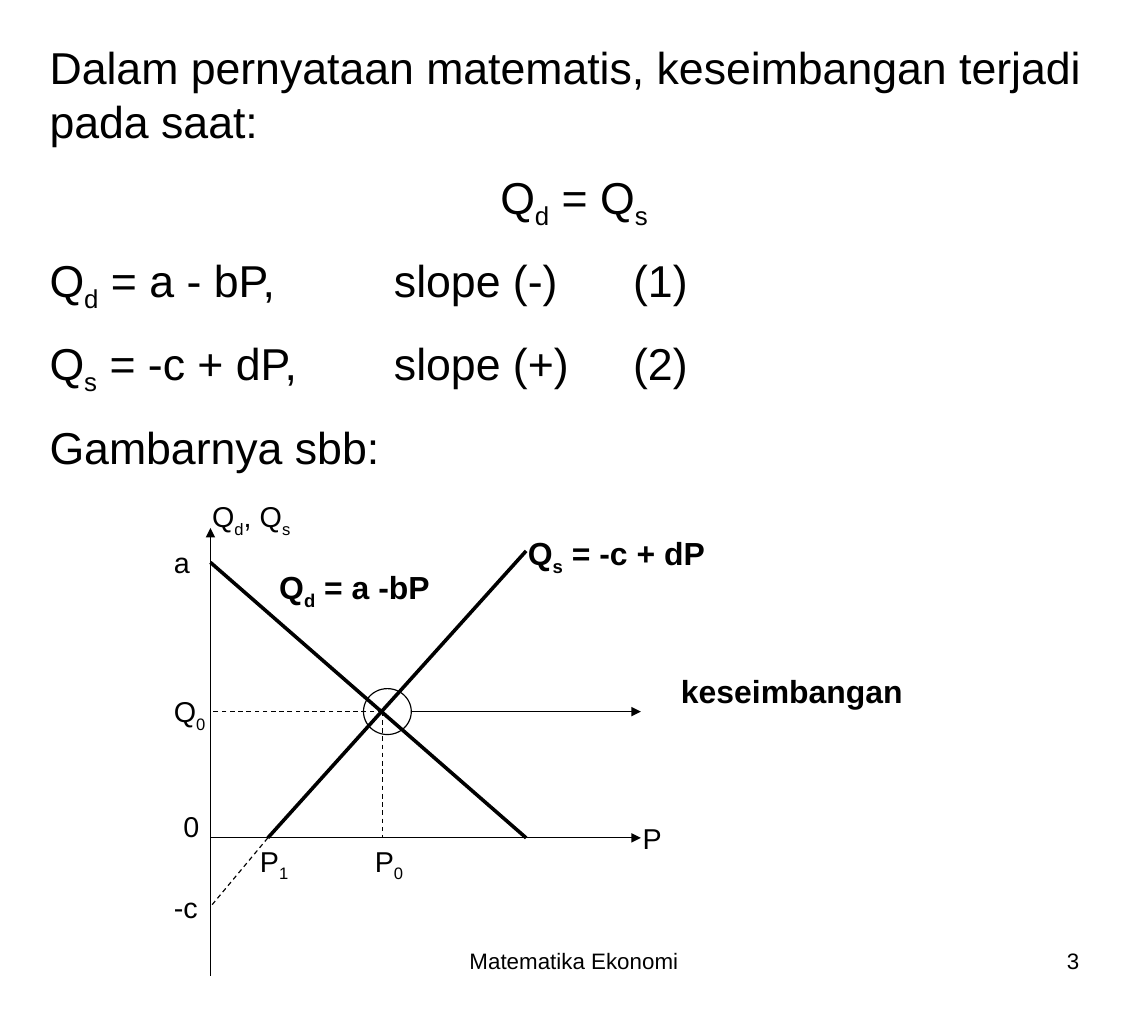
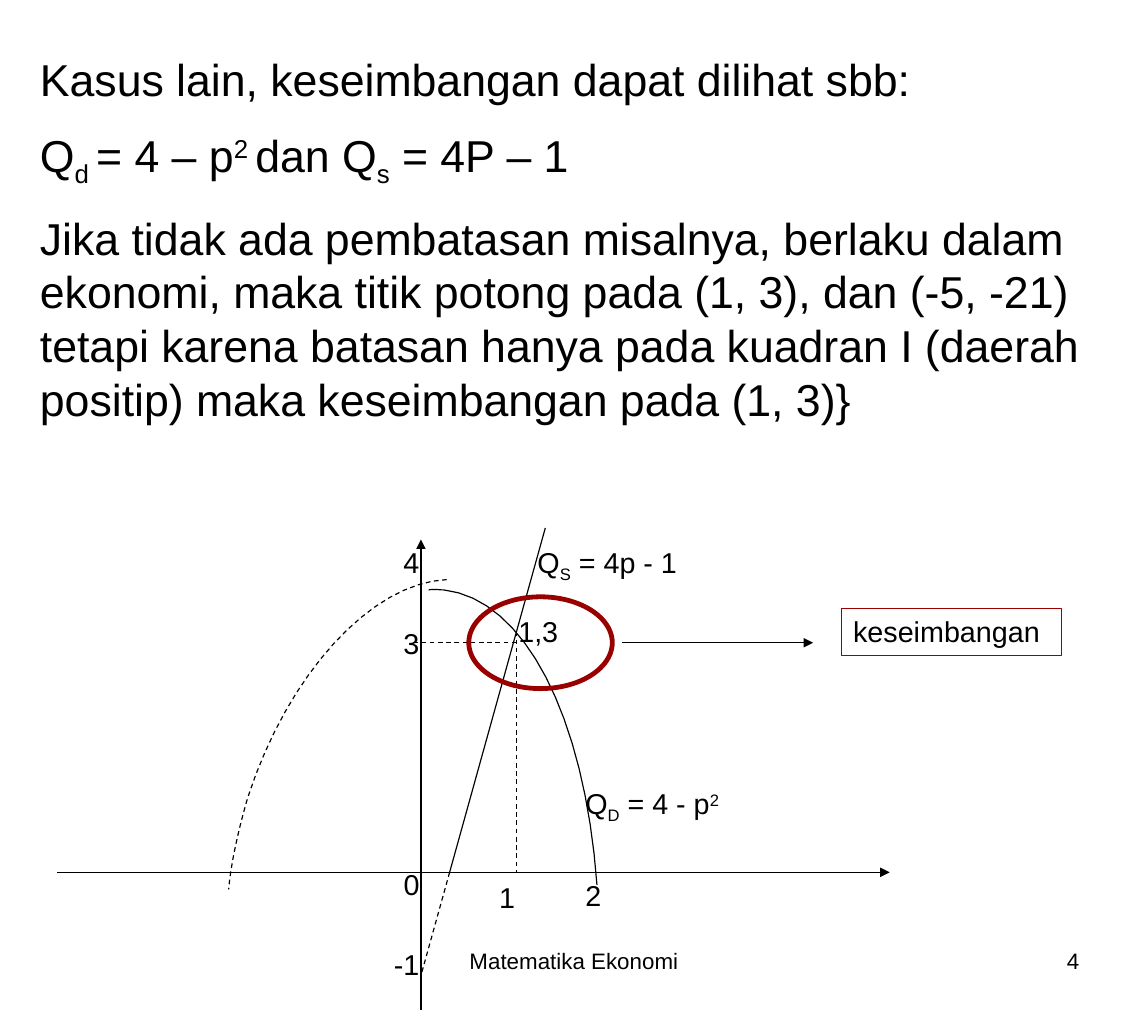
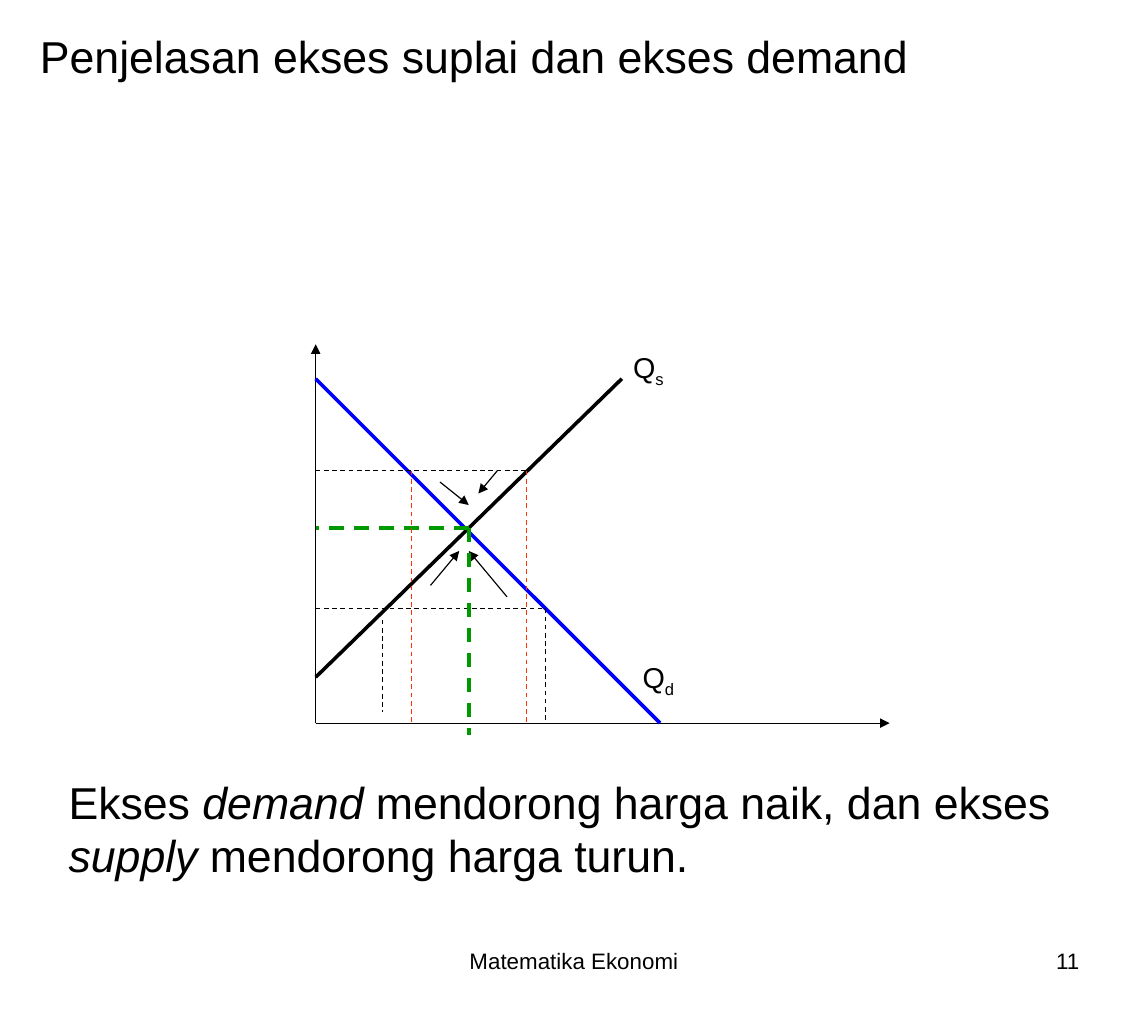
from itertools import groupby

from lxml.etree import SubElement
from pptx import Presentation
from pptx.dml.color import RGBColor
from pptx.enum.dml import MSO_LINE_DASH_STYLE as Dash
from pptx.enum.shapes import MSO_CONNECTOR_TYPE as Connector, MSO_SHAPE as Shape
from pptx.enum.text import MSO_ANCHOR as Anchor, MSO_AUTO_SIZE as AutoSize, PP_ALIGN as Align
from pptx.oxml.ns import qn
from pptx.util import Inches, Pt

BLACK = RGBColor(0x00, 0x00, 0x00)
BLUE = RGBColor(0x00, 0x00, 0xFF)
GREEN = RGBColor(0x00, 0x99, 0x00)
ORANGE = RGBColor(0xFF, 0x33, 0x00)
DARK_RED = RGBColor(0x99, 0x00, 0x00)

COLUMN, ROW = Inches(10) // 120, Inches(9) // 90
FONT = "Arial"
BODY, STRONG, LABEL, FOOTER = 28, 20, 18, 14
THIN, THICK, HEAVY = 0.75, 2.25, 3
BASELINES = {"~": "-25000", "^": "30000"}
ITALIC = "*"


def styled_pieces(text):
    """Split text into (piece, mark): ~ encloses subscript, ^ superscript, * italic."""
    mark, letters = None, []
    for letter in text:
        if letter in BASELINES or letter == ITALIC:
            mark = None if mark else letter
        else:
            letters.append((letter, mark))
    for mark, group in groupby(letters, key=lambda pair: pair[1]):
        yield "".join(letter for letter, _ in group), mark


def curve_points(start, *segments, steps=16):
    """Points along a chain of cubic curves, each (control, control, end)."""
    points = [start]
    for first, second, end in segments:
        for step in range(1, steps + 1):
            t = step / steps
            weights = ((1 - t) ** 3, 3 * t * (1 - t) ** 2, 3 * t * t * (1 - t), t ** 3)
            corners = (start, first, second, end)
            points.append(tuple(sum(w * corner[axis] for w, corner in zip(weights, corners))
                                for axis in (0, 1)))
        start = end
    return points


class Deck:
    """Draws on the current slide in grid columns (120) and rows (90)."""

    def __init__(self):
        self.presentation = Presentation()
        self.presentation.slide_width = 120 * COLUMN
        self.presentation.slide_height = 90 * ROW
        self.slide = None

    def new_slide(self, number):
        layout = self.presentation.slide_layouts[6]
        self.slide = self.presentation.slides.add_slide(layout)
        self.text(41, 82, 38, "Matematika Ekonomi", FOOTER, height=6.2, align=Align.CENTER)
        self.text(86, 82, 28, str(number), FOOTER, height=6.2, align=Align.RIGHT)

    def place(self, column, row, width, height):
        return (round(column * COLUMN), round(row * ROW),
                round(width * COLUMN), round(height * ROW))

    def fill_text(self, shape, paragraphs, size, bold=False, align=Align.LEFT):
        frame = shape.text_frame
        frame.word_wrap = True
        frame.auto_size = AutoSize.NONE
        frame.vertical_anchor = Anchor.TOP
        for index, text in enumerate(paragraphs):
            paragraph = frame.add_paragraph() if index else frame.paragraphs[0]
            paragraph.alignment = align
            paragraph.space_before = Pt(size / 2)
            for piece, mark in styled_pieces(text):
                run = paragraph.add_run()
                run.text = piece
                font = run.font
                font.name, font.size, font.bold = FONT, Pt(size), bold
                font.color.rgb = BLACK
                font.italic = mark == ITALIC
                if mark in BASELINES:
                    font._element.set("baseline", BASELINES[mark])
        return frame.paragraphs

    def text(self, column, row, width, text, size=LABEL, height=4, bold=False, align=Align.LEFT):
        box = self.slide.shapes.add_textbox(*self.place(column, row, width, height))
        paragraphs = [text] if isinstance(text, str) else text
        return self.fill_text(box, paragraphs, size, bold, align)

    def labels(self, *entries):
        for entry in entries:
            self.text(*entry)

    def tab_stops(self, paragraph, *columns):
        properties = paragraph._p.get_or_add_pPr()
        stops = SubElement(properties, qn("a:tabLst"))
        for column in columns:
            SubElement(stops, qn("a:tab"), pos=str(column * COLUMN), algn="l")

    def stroke(self, shape, color, weight, dashed=False):
        shape.line.color.rgb = color
        shape.line.width = Pt(weight)
        if dashed:
            shape.line.dash_style = Dash.DASH

    def line(self, start, end, color=BLACK, weight=THIN, dashed=False, arrow=False):
        ends = [round(value * unit) for point in (start, end)
                for value, unit in zip(point, (COLUMN, ROW))]
        connector = self.slide.shapes.add_connector(Connector.STRAIGHT, *ends)
        self.stroke(connector, color, weight, dashed)
        if arrow:
            SubElement(connector.line._get_or_add_ln(), qn("a:tailEnd"), type="triangle")
        SubElement(connector._element.spPr, qn("a:effectLst"))

    def lines(self, *ends, **style):
        for start, end in ends:
            self.line(start, end, **style)

    def arrows(self, *ends):
        self.lines(*ends, arrow=True)

    def curve(self, points, dashed=False):
        first, *rest = [(x * COLUMN, y * ROW) for x, y in points]
        builder = self.slide.shapes.build_freeform(*first)
        builder.add_line_segments(rest, close=False)
        shape = builder.convert_to_shape()
        shape.shadow.inherit = False
        shape.fill.background()
        self.stroke(shape, BLACK, THIN, dashed)

    def outline(self, kind, column, row, width, height, color=BLACK, weight=THIN):
        shape = self.slide.shapes.add_shape(kind, *self.place(column, row, width, height))
        shape.shadow.inherit = False
        shape.fill.background()
        self.stroke(shape, color, weight)
        return shape


def equilibrium_slide(deck):
    deck.new_slide(3)
    paragraphs = deck.text(4, 3, 112, [
        "Dalam pernyataan matematis, keseimbangan terjadi pada saat:",
        "Q~d~ = Q~s~",
        "Q~d~ = a - bP,\tslope (-)\t(1)",
        "Q~s~ = -c + dP,\tslope (+)\t(2)",
        "Gambarnya sbb:",
    ], BODY, height=38.4)
    paragraphs[1].alignment = Align.CENTER
    for equation in paragraphs[2:4]:
        deck.tab_stops(equation, 36, 61)

    deck.arrows(((22, 85), (22, 46)), ((22, 73), (67, 73)), ((43, 62), (67, 62)))
    deck.lines(((22, 49), (55, 73)), ((28, 73), (55, 48)), weight=THICK)
    deck.lines(((28, 73), (22, 79)), ((40, 62), (40, 73)), ((40, 62), (22, 62)), dashed=True)
    deck.outline(Shape.OVAL, 38, 60, 5, 4)
    deck.labels(
        (21, 43, 12, "Q~d~, Q~s~"), (66, 71, 6, "P"), (17, 77, 6, "-c"),
        (26, 73, 7, "P~1~"), (17, 47, 4, "a"), (38, 73, 6, "P~0~"),
        (17, 60, 6, "Q~0~"), (18, 70, 4, "0"))
    for column, row, width, text in (
            (28, 49, 21, "Q~d~ = a -bP"), (54, 46, 23, "Q~s~ = -c + dP"),
            (70, 58, 26, "keseimbangan")):
        deck.text(column, row, width, text, STRONG, bold=True)


def quadratic_slide(deck):
    deck.new_slide(4)
    deck.text(3, 4, 114, [
        "Kasus lain, keseimbangan dapat dilihat sbb:",
        "Q~d ~= 4 – p^2 ^dan Q~s~ = 4P – 1",
        "Jika tidak ada pembatasan misalnya, berlaku dalam ekonomi, maka titik potong "
        "pada (1, 3), dan (-5, -21) tetapi karena batasan hanya pada kuadran I (daerah "
        "positip) maka keseimbangan pada (1, 3)}",
    ], BODY, height=33.7)

    deck.arrows(((44, 88), (44, 47)), ((6, 76), (93, 76)), ((65, 56), (85, 56)))
    deck.curve(curve_points((44.8, 51.4), ((45.4, 51.3), (45.9, 51.4), (46.4, 51.4)),
                            ((54.8, 52.2), (61.1, 62.3), (62.4, 77.1))))
    deck.curve(curve_points((46.7, 50.5), ((38.8, 50.8), (30.1, 58.7), (25.9, 69.5)),
                            ((25, 72.1), (24.2, 74.9), (23.9, 77.5))), dashed=True)
    deck.line((47, 76), (57, 46))
    deck.lines(((47, 76), (44, 85)), ((54, 55), (54, 76)), ((54, 56), (43, 56)), dashed=True)
    deck.labels(
        (41, 75, 4, "0"), (40, 82, 6, "-1"), (53, 53, 8, "1,3"), (60, 76, 6, "2"),
        (41, 47, 5, "4"), (41, 54, 5, "3"), (51, 76.2, 6, "1"),
        (55, 47, 21, "Q~S~ = 4p - 1"), (60, 68, 21, "Q~D~ = 4 - p^2^"))
    deck.outline(Shape.OVAL, 49, 52, 15, 8, DARK_RED, HEAVY)
    box = deck.outline(Shape.RECTANGLE, 88, 53, 23, 4.1, DARK_RED)
    deck.fill_text(box, ["keseimbangan"], LABEL)


def excess_slide(deck):
    deck.new_slide(11)
    deck.text(3, 2, 114, "Penjelasan ekses suplai dan ekses demand", BODY, height=5.7)

    deck.arrows(((33, 63), (33, 30)), ((33, 63), (93, 63)))
    deck.line((33, 33), (69, 63), BLUE, THICK)
    deck.line((33, 59), (65, 33), BLACK, THICK)
    deck.lines(((33, 41), (55, 41)), ((33, 53), (57, 53)),
               ((40, 54), (40, 62)), ((57, 53), (57, 63)), dashed=True)
    deck.arrows(((53, 52), (49, 48)), ((46, 42), (49, 44)),
                ((52, 41), (50, 43)), ((45, 51), (48, 48)))
    deck.lines(((49, 46), (49, 64)), ((49, 46), (33, 46)),
               color=GREEN, weight=THICK, dashed=True)
    deck.lines(((43, 41), (43, 63)), ((55, 41), (55, 63)), color=ORANGE, dashed=True)
    deck.labels((65, 30, 9, "Q~s~"), (66, 57, 7, "Q~d~"))
    deck.text(6, 67, 108, "Ekses *demand *mendorong harga naik, dan ekses "
              "*supply* mendorong harga turun.", BODY, height=10.4)


def main():
    deck = Deck()
    for build in (equilibrium_slide, quadratic_slide, excess_slide):
        build(deck)
    deck.presentation.save("out.pptx")


if __name__ == "__main__":
    main()
